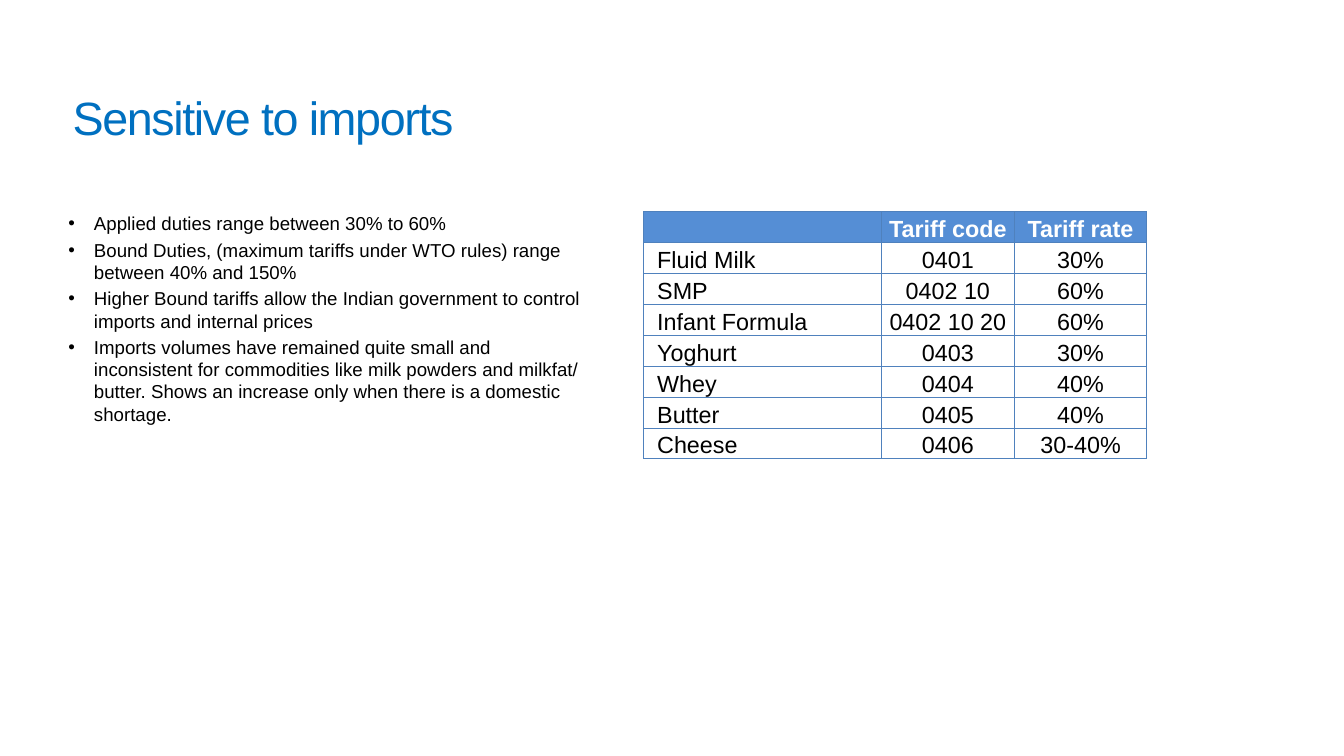
from dataclasses import dataclass

from lxml import etree
from pptx import Presentation
from pptx.dml.color import RGBColor
from pptx.enum.text import MSO_ANCHOR, PP_ALIGN
from pptx.oxml.ns import qn
from pptx.util import Inches, Pt

LEFT, CENTER = PP_ALIGN.LEFT, PP_ALIGN.CENTER
BOTTOM = MSO_ANCHOR.BOTTOM


@dataclass(frozen=True)
class Theme:
    font: str = "Arial"
    title: str = "0070C0"
    text: str = "000000"
    header_text: str = "FFFFFF"
    header_fill: str = "558ED5"
    border: str = "4F81BD"
    title_size: float = 50
    body_size: float = 20
    table_size: float = 25


THEME = Theme()
TITLE = "Sensitive to imports"
BULLETS = [
    "Applied duties range between 30% to 60%",
    "Bound Duties, (maximum tariffs under WTO rules) range between 40% and 150%",
    "Higher Bound tariffs allow the Indian government to control imports and internal prices",
    "Imports volumes have remained quite small and inconsistent for commodities like "
    "milk powders and milkfat/ butter. Shows an increase only when there is a domestic shortage.",
]
TARIFFS = [
    ("", "Tariff code", "Tariff rate"),
    ("Fluid Milk", "0401", "30%"),
    ("SMP", "0402 10", "60%"),
    ("Infant Formula", "0402 10 20", "60%"),
    ("Yoghurt", "0403", "30%"),
    ("Whey", "0404", "40%"),
    ("Butter", "0405", "40%"),
    ("Cheese", "0406", "30-40%"),
]
COLUMN_WIDTHS = (3.53, 1.99, 1.96)
ROW_HEIGHT = 0.46
PRODUCT_INDENT = 0.2


def write(paragraph, text, *, size, color, bold=False, align=LEFT, spacing=None,
          line_height=None, space_before=0, bullet_indent=None):
    """Put text in a paragraph; spacing is between letters, in points."""
    if bullet_indent:
        properties = paragraph._p.get_or_add_pPr()
        properties.set("marL", str(Inches(bullet_indent)))
        properties.set("indent", str(-Inches(bullet_indent)))
        etree.SubElement(properties, qn("a:buFont"), typeface=THEME.font)
        etree.SubElement(properties, qn("a:buChar"), char="•")
    paragraph.alignment = align
    paragraph.space_before = Pt(space_before)
    if line_height:
        paragraph.line_spacing = Pt(line_height)
    run = paragraph.add_run()
    run.text = text
    run.font.name = THEME.font
    run.font.size = Pt(size)
    run.font.bold = bold
    run.font.color.rgb = RGBColor.from_string(color)
    if spacing:
        run._r.get_or_add_rPr().set("spc", str(round(spacing * 100)))


def add_text_frame(slide, left, top, width, height):
    text_box = slide.shapes.add_textbox(*map(Inches, (left, top, width, height)))
    text_box.text_frame.word_wrap = True
    return text_box.text_frame


def set_margins(target, left, top, right, bottom):
    target.margin_left, target.margin_top = Inches(left), Inches(top)
    target.margin_right, target.margin_bottom = Inches(right), Inches(bottom)


def add_borders(cell):
    properties = cell._tc.get_or_add_tcPr()
    for side in ("lnL", "lnR", "lnT", "lnB"):
        line = etree.SubElement(properties, qn(f"a:{side}"), w=str(Pt(1)))
        fill = etree.SubElement(line, qn("a:solidFill"))
        etree.SubElement(fill, qn("a:srgbClr"), val=THEME.border)


def add_title(slide):
    frame = add_text_frame(slide, 1.08, 0.38, 18.92, 1.51)
    set_margins(frame, 0, 0, 0, 0)
    write(frame.paragraphs[0], TITLE, size=THEME.title_size, color=THEME.title,
          spacing=-1.5, line_height=127.7)


def add_bullets(slide):
    frame = add_text_frame(slide, 0.92, 3.11, 7.99, 7.46)
    for index, text in enumerate(BULLETS):
        paragraph = frame.add_paragraph() if index else frame.paragraphs[0]
        write(paragraph, text, size=THEME.body_size, color=THEME.text,
              space_before=4 if index else 0, bullet_indent=0.38)


def add_tariff_table(slide):
    table = slide.shapes.add_table(
        len(TARIFFS), len(COLUMN_WIDTHS), Inches(9.58), Inches(3.15),
        Inches(sum(COLUMN_WIDTHS)), Inches(ROW_HEIGHT * len(TARIFFS))).table
    table.horz_banding = False
    for column, width in zip(table.columns, COLUMN_WIDTHS):
        column.width = Inches(width)
    for row_index, values in enumerate(TARIFFS):
        is_header = row_index == 0
        for column_index, value in enumerate(values):
            is_product = column_index == 0
            cell = table.cell(row_index, column_index)
            cell.vertical_anchor = BOTTOM
            set_margins(cell, PRODUCT_INDENT if is_product else 0.01, 0.01, 0.01, 0)
            add_borders(cell)
            if is_header:
                cell.fill.solid()
                cell.fill.fore_color.rgb = RGBColor.from_string(THEME.header_fill)
            else:
                cell.fill.background()
            if value:
                write(cell.text_frame.paragraphs[0], value, size=THEME.table_size,
                      color=THEME.header_text if is_header else THEME.text,
                      bold=is_header, align=LEFT if is_product else CENTER)


def main():
    presentation = Presentation()
    presentation.slide_width = Inches(20)
    presentation.slide_height = Inches(11.25)
    slide = presentation.slides.add_slide(presentation.slide_layouts[6])
    add_tariff_table(slide)
    add_bullets(slide)
    add_title(slide)
    presentation.save("out.pptx")


if __name__ == "__main__":
    main()
